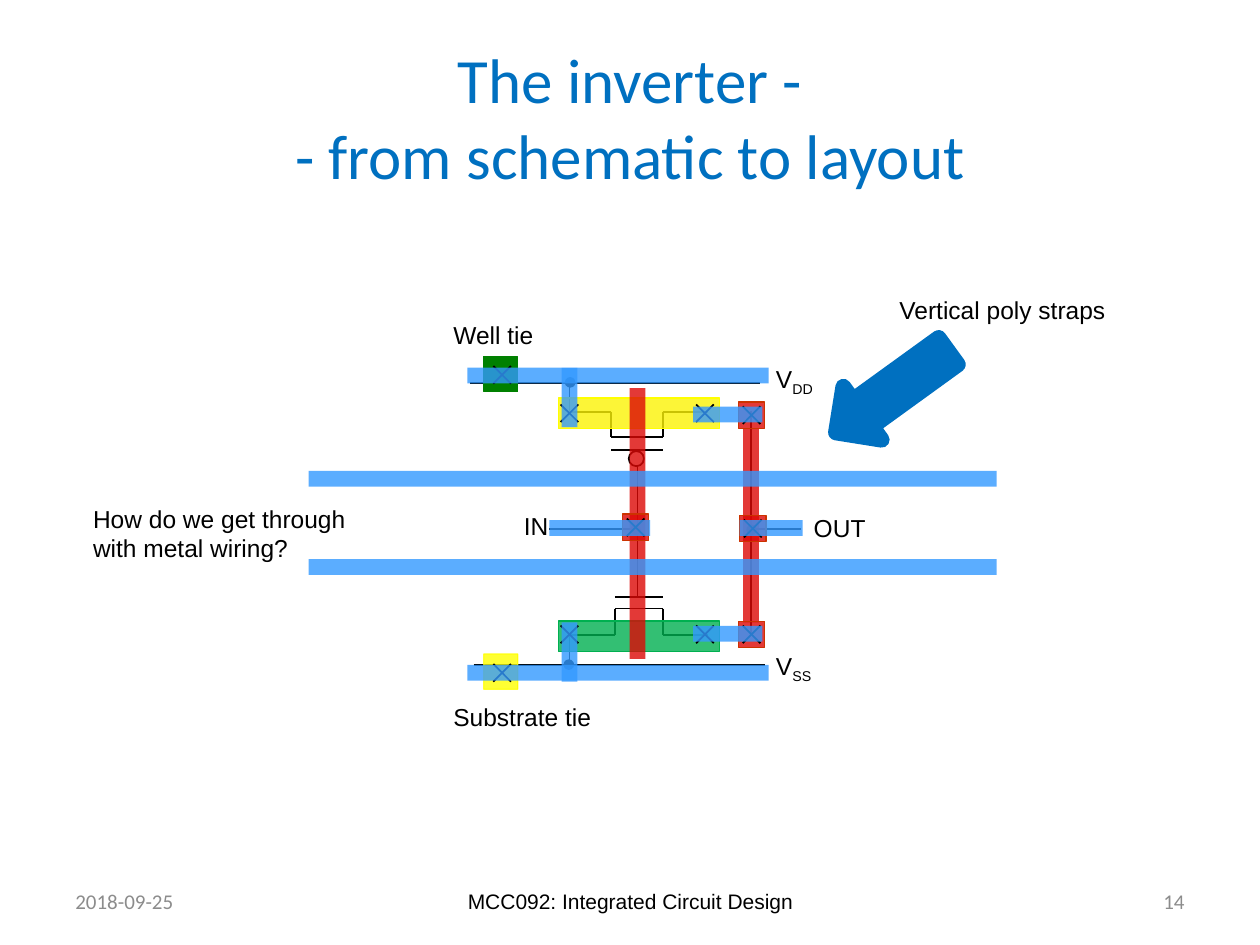
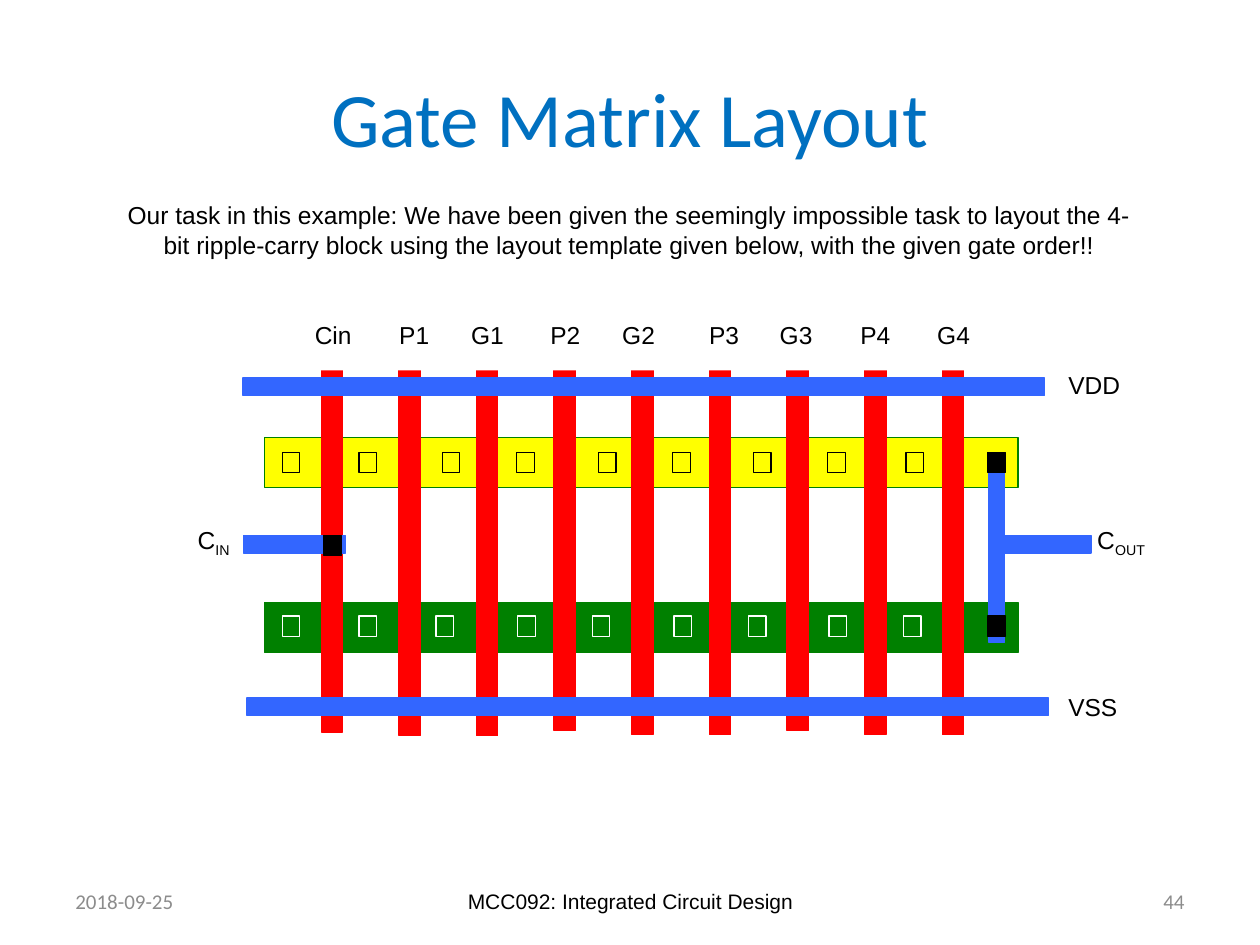
from lxml import etree
from pptx import Presentation
from pptx.dml.color import RGBColor
from pptx.enum.shapes import MSO_CONNECTOR, MSO_SHAPE
from pptx.enum.text import MSO_ANCHOR, PP_ALIGN
from pptx.oxml.ns import qn
from pptx.util import Cm, Pt

RECT, OVAL, ARROW = MSO_SHAPE.RECTANGLE, MSO_SHAPE.OVAL, MSO_SHAPE.RIGHT_ARROW
STRAIGHT = MSO_CONNECTOR.STRAIGHT
TOP, MIDDLE = MSO_ANCHOR.TOP, MSO_ANCHOR.MIDDLE
LEFT, CENTER, RIGHT = PP_ALIGN.LEFT, PP_ALIGN.CENTER, PP_ALIGN.RIGHT

# Shared colours
BLACK, WHITE, GREY = "000000", "FFFFFF", "8C8C8C"
TITLE_BLUE, METAL, RAIL = "0070C0", "3399FF", "3366FF"
POLY, POLY_EDGE, RED = "DD0806", "CC3300", "FF0000"
YELLOW, PALE_YELLOW, GREEN, DARK_GREEN = "FFFF00", "FCF305", "00B050", "008000"

# Shared text; all places below are in inches
DATE, COURSE = "2018-09-25", "MCC092: Integrated Circuit Design"
TITLE_BOX = (0.5, 0.3, 9, 1.25)
DATE_BOX, COURSE_BOX, NUMBER_BOX = [(x, 6.95, w, 0.4) for x, w in
                                    ((0.5, 2.33), (3.42, 3.17), (7.17, 2.33))]

# Inverter: schematic
OUTPUT_WIRE = [(5.96, 3.26), (5.96, 5.04)]
SCHEMATIC = [
    [(4.51, 3.27), (4.85, 3.27), (4.85, 3.47), (5.26, 3.47), (5.26, 3.27), (5.62, 3.27)],
    [(4.85, 3.57), (5.26, 3.57)],
    [(5.06, 3.6), (5.06, 4.74)],
    [(4.51, 5.04), (4.88, 5.04), (4.88, 4.83), (5.26, 4.83), (5.26, 5.04), (5.62, 5.04)],
    [(4.88, 4.74), (5.26, 4.74)],
    [(4.52, 5.28), (4.52, 5.04)],
    [(4.52, 3.28), (4.52, 3.03)],
    [(5.96, 4.2), (6.36, 4.2)],
    [(4.36, 4.2), (5.05, 4.2)],
    [(3.73, 3.04), (6.03, 3.04)],
    [(3.76, 5.28), (6.07, 5.28)],
]
GATE_BUBBLE = (4.99, 3.58, 0.12, 0.12)
JUNCTIONS = [(5.93, 4.17), (5.01, 4.17), (4.49, 3), (4.48, 5.24)]
INVERTER_LABELS = [
    ("Vertical poly straps", None, (7.04, 2.29, 2.4, 0.74)),
    ("IN", None, (4.06, 4.01, 0.72, 0.52)),
    ("Well tie", None, (3.5, 2.49, 2.4, 0.38)),
    ("Substrate tie", None, (3.5, 5.52, 3.07, 0.41)),
    ("V", "DD", (6.06, 2.84, 1.07, 0.65)),
    ("V", "SS", (6.06, 5.12, 0.65, 0.4)),
    ("OUT", None, (6.36, 4.02, 0.89, 0.36)),
    ("How do we get through with metal wiring?", None, (0.64, 3.95, 2.4, 0.74)),
]

# Inverter: layout layers
WELL_TIE, SUBSTRATE_TIE = (3.84, 2.83, 0.27, 0.28), (3.84, 5.19, 0.27, 0.28)
DIFFUSIONS = [(3.16, PALE_YELLOW, YELLOW), (4.93, GREEN, GREEN)]
CROSSES = [(4.52, 3.28), (5.595, 3.28), (4.52, 5.035),
           (5.595, 5.035), (3.985, 2.975), (3.985, 5.34)]
OUTER_CONTACTS = [(5.965, 5.035), (5.965, 3.295)]
INPUT_CONTACT, OUTPUT_CONTACT = (5.045, 4.185), (5.975, 4.195)
METAL_BELOW = [
    [(5.16, 4.19), (4.36, 4.19)],
    [(4.52, 2.92), (4.52, 3.39)],
    [(4.52, 4.94), (4.52, 5.41)],
]
METAL_ABOVE = [
    [(5.5, 3.29), (6.05, 3.29)],
    [(5.5, 5.03), (6.05, 5.03)],
    [(2.45, 3.8), (7.91, 3.8)],
    [(2.45, 4.5), (7.91, 4.5)],
]
METAL_LAST = [
    [(5.87, 4.19), (6.37, 4.19)],
    [(3.71, 2.98), (6.1, 2.98)],
    [(3.71, 5.34), (6.1, 5.34)],
]

# Gate matrix
TASK = ("Our task in this example: We have been given the seemingly impossible task to "
        "layout the 4-bit ripple-carry block using the layout template given below, "
        "with the given gate order!!")
GATES = ["Cin", "P1", "G1", "P2", "G2", "P3", "G3", "P4", "G4"]
GATE_TABS = [0.67, 1.24, 1.87, 2.44, 3.13, 3.69, 4.33, 4.94]
STRAP_TOPS = [2.86, 2.89, 2.89, 2.85, 2.88, 2.88, 2.85, 2.88, 2.88]
STRAP_LEFT, STRAP_STEP = 2.55, 0.616
UPPER_ROW, LOWER_ROW = 3.59, 4.89
UPPER_SITES = [2.24, 2.85, 3.51, 4.1, 4.75, 5.34, 5.98, 6.57, 7.19]
LOWER_SITES = [2.24, 2.85, 3.46, 4.11, 4.7, 5.35, 5.94, 6.58, 7.17]
SUPPLY_AND_INPUT = [(1.93, 3, 6.36, 0.14), (1.96, 5.54, 6.36, 0.14), (1.93, 4.25, 0.81, 0.14)]
OUTPUT_METAL = [(7.85, 4.25, 0.81, 0.14), (7.85, 3.59, 0.12, 1.51)]
CONNECTED_SITES = [(7.84, UPPER_ROW), (2.57, 4.25), (7.84, LOWER_ROW)]
MATRIX_LABELS = [
    ("C", "OUT", (8.61, 4.12, 0.79, 0.45)),
    ("VDD", None, (8.38, 2.89, 0.79, 0.45)),
    ("VSS", None, (8.38, 5.44, 0.79, 0.45)),
    ("C", "IN", (1.47, 4.12, 0.79, 0.45)),
]


def inches(*values):
    return [Cm(value * 2.54) for value in values]


def rgb(colour):
    return RGBColor.from_string(colour)


def paint(shape, fill, colour, opacity=100):
    """Fill with a colour; call for the area before the outline."""
    fill.solid()
    fill.fore_color.rgb = rgb(colour)
    if opacity < 100:
        newest = list(shape._element.spPr.iter(qn("a:srgbClr")))[-1]
        etree.SubElement(newest, qn("a:alpha")).set("val", str(opacity * 1000))


def add_part(page, place, fill=None, line=None, width=0.75, kind=RECT,
             opacity=100, line_opacity=100, rotation=0):
    part = page.shapes.add_shape(kind, *inches(*place))
    part.shadow.inherit = False
    part.rotation = rotation
    if fill:
        paint(part, part.fill, fill, opacity)
    else:
        part.fill.background()
    if line:
        paint(part, part.line.fill, line, line_opacity)
        part.line.width = Pt(width)
    else:
        part.line.fill.background()
    return part


def add_wire(page, points, colour=BLACK, width=1, opacity=100):
    for start, end in zip(points, points[1:]):
        wire = page.shapes.add_connector(STRAIGHT, *inches(*start, *end))
        paint(wire, wire.line.fill, colour, opacity)
        wire.line.width = Pt(width)
        etree.SubElement(wire._element.spPr, qn("a:effectLst"))


def add_strap(page, points, colour):
    add_wire(page, points, colour, width=9, opacity=80)


def add_text(page, text, place, size=14, font="Arial", colour=BLACK, align=LEFT,
             anchor=TOP, subscript=None, tabs=()):
    box = page.shapes.add_textbox(*inches(*place))
    frame = box.text_frame
    frame.word_wrap = True
    frame.vertical_anchor = anchor
    para = frame.paragraphs[0]
    para.alignment = align

    def add_span(words):
        span = para.add_run()
        span.text = words
        span.font.size, span.font.name = Pt(size), font
        span.font.color.rgb = rgb(colour)
        return span

    for index, row in enumerate(text.split("\n")):
        if index:
            para.add_line_break()
        add_span(row)
    if subscript:
        add_span(subscript).font._element.set("baseline", "-25000")
    if tabs:
        tab_list = etree.SubElement(para._p.get_or_add_pPr(), qn("a:tabLst"))
        for position in inches(*tabs):
            etree.SubElement(tab_list, qn("a:tab"), pos=str(int(position)), algn="l")
    return box


def add_labels(page, labels):
    for text, subscript, place in labels:
        add_text(page, text, place, subscript=subscript)


def add_page(deck, title, number, title_size):
    page = deck.slides.add_slide(deck.slide_layouts[6])
    add_text(page, title, TITLE_BOX, size=title_size, font="Calibri",
             colour=TITLE_BLUE, align=CENTER, anchor=MIDDLE)
    add_text(page, COURSE, COURSE_BOX, size=12, align=CENTER, anchor=MIDDLE)
    for text, place, align in ((DATE, DATE_BOX, LEFT), (number, NUMBER_BOX, RIGHT)):
        add_text(page, text, place, size=12, font="Calibri", colour=GREY,
                 align=align, anchor=MIDDLE)
    return page


def add_cross(page, x, y, reach=0.07):
    add_wire(page, [(x + reach, y - reach), (x - reach, y + reach)])
    add_wire(page, [(x + reach, y + reach), (x - reach, y - reach)])


def add_poly_contact(page, x, y, side=0.21):
    add_part(page, (x - side / 2, y - side / 2, side, side), POLY, POLY_EDGE, opacity=80)
    add_cross(page, x, y)


def build_inverter(deck):
    page = add_page(deck, "The inverter -\n- from schematic to layout", "14", 36)

    # Output strap and schematic
    add_wire(page, OUTPUT_WIRE)
    add_strap(page, [(5.96, 3.4), (5.96, 4.94)], POLY)
    for center in OUTER_CONTACTS:
        add_poly_contact(page, *center)
    for points in SCHEMATIC:
        add_wire(page, points)
    add_part(page, GATE_BUBBLE, WHITE, BLACK, 1, OVAL)
    for x, y in JUNCTIONS:
        add_part(page, (x, y, 0.07, 0.07), BLACK, BLACK, 1, OVAL)

    # Ties, labels and diffusion
    add_part(page, WELL_TIE, DARK_GREEN, DARK_GREEN)
    add_part(page, SUBSTRATE_TIE, YELLOW, YELLOW, opacity=80, line_opacity=80)
    add_labels(page, INVERTER_LABELS)
    for top, fill, edge in DIFFUSIONS:
        add_part(page, (4.43, top, 1.28, 0.24), fill, edge, opacity=80)
    for center in CROSSES:
        add_cross(page, *center)

    # Input strap, metal and pointer
    add_strap(page, [(5.06, 3.08), (5.06, 5.23)], POLY)
    add_poly_contact(page, *INPUT_CONTACT)
    for points in METAL_BELOW:
        add_strap(page, points, METAL)
    add_part(page, (6.53, 2.85, 1.1, 0.52), TITLE_BLUE, TITLE_BLUE, 9, ARROW, rotation=144.1)
    for points in METAL_ABOVE:
        add_strap(page, points, METAL)
    add_poly_contact(page, *OUTPUT_CONTACT)
    for points in METAL_LAST:
        add_strap(page, points, METAL)


def build_gate_matrix(deck):
    page = add_page(deck, "Gate Matrix Layout", "44", 44)
    add_text(page, TASK, (0.88, 1.54, 8.23, 0.77), align=CENTER)

    # Diffusion rows, poly straps and supply rails
    for top, fill in ((3.47, YELLOW), (4.78, DARK_GREEN)):
        add_part(page, (2.1, top, 5.98, 0.4), fill, DARK_GREEN)
    for index, top in enumerate(STRAP_TOPS):
        add_part(page, (STRAP_LEFT + index * STRAP_STEP, top, 0.17, 2.95), RED, RED)
    for place in SUPPLY_AND_INPUT:
        add_part(page, place, RAIL, RAIL)

    # Labels; the gate row covers the strap ends
    gate_row = add_text(page, "\t".join(GATES), (2.4, 2.49, 6.54, 0.45), tabs=GATE_TABS)
    paint(gate_row, gate_row.fill, WHITE)
    add_labels(page, MATRIX_LABELS)

    # Output metal and contact sites
    for place in OUTPUT_METAL:
        add_part(page, place, RAIL, RAIL)
    for x, y in CONNECTED_SITES:
        add_part(page, (x, y, 0.14, 0.16), BLACK, BLACK)
    for sites, y, edge in ((UPPER_SITES, UPPER_ROW, BLACK), (LOWER_SITES, LOWER_ROW, WHITE)):
        for x in sites:
            add_part(page, (x, y, 0.14, 0.16), line=edge)


def main():
    deck = Presentation()
    deck.slide_width, deck.slide_height = inches(10, 7.5)
    build_inverter(deck)
    build_gate_matrix(deck)
    deck.save("out.pptx")


if __name__ == "__main__":
    main()
